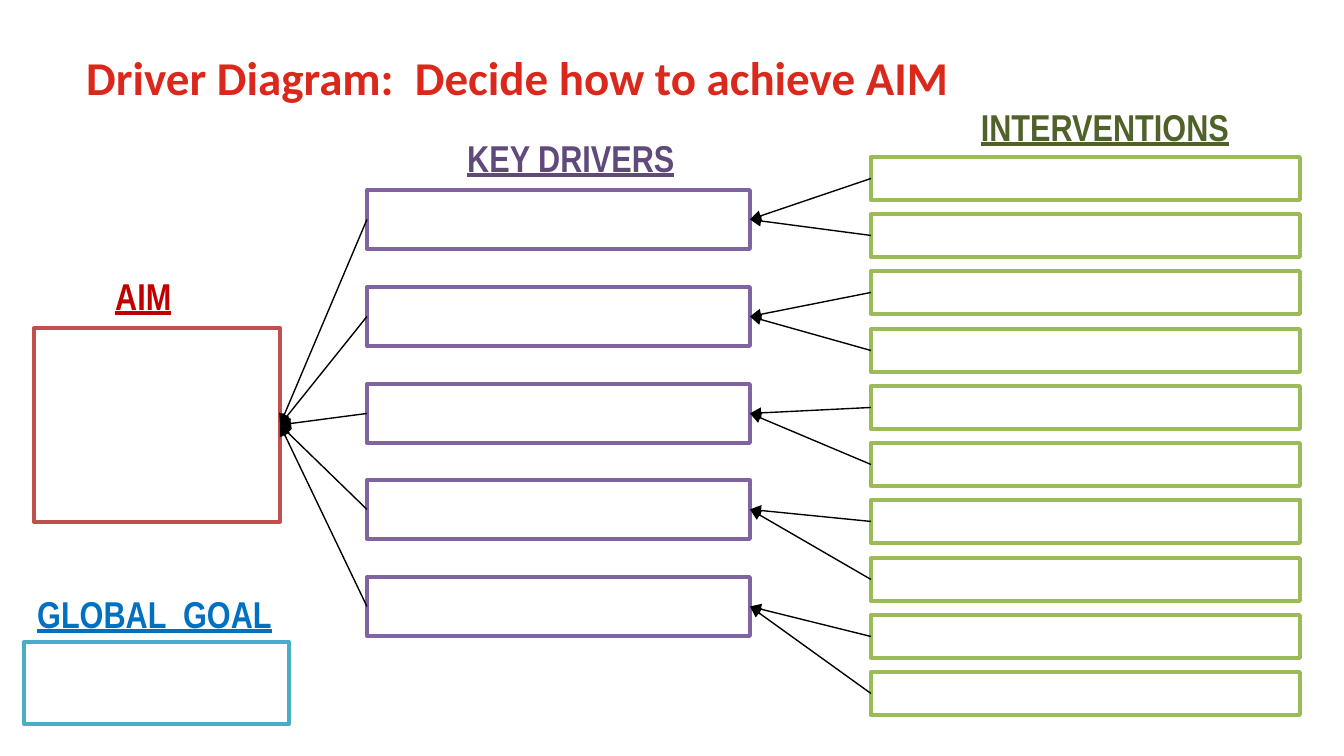
from lxml.etree import SubElement
from pptx import Presentation
from pptx.dml.color import RGBColor as RGB
from pptx.enum.shapes import MSO_CONNECTOR as LINK, MSO_SHAPE as SHAPE
from pptx.enum.text import MSO_ANCHOR as ANCHOR, MSO_AUTO_SIZE as FIT, PP_ALIGN as ALIGN
from pptx.oxml.ns import qn
from pptx.util import Pt

PX = 914400 / 134.4
RED = RGB(0xDA, 0x29, 0x1C)
CRIMSON = RGB(0xC0, 0x00, 0x00)
BRICK = RGB(0xC0, 0x50, 0x4D)
PLUM = RGB(0x60, 0x4A, 0x7B)
PURPLE = RGB(0x80, 0x64, 0xA2)
OLIVE = RGB(0x4F, 0x62, 0x28)
GREEN = RGB(0x9B, 0xBB, 0x59)
BLUE = RGB(0x00, 0x70, 0xC0)
TEAL = RGB(0x4B, 0xAC, 0xC6)
WHITE = RGB(0xFF, 0xFF, 0xFF)
BLACK = RGB(0x00, 0x00, 0x00)


def emu(*sizes):
    return [round(size * PX) for size in sizes]


class Board:
    """Draws the parts of a driver diagram on one slide in a shared style."""

    def __init__(self, slide):
        self.shapes = slide.shapes

    def text(self, words, area, color, font, size):
        frame = self.shapes.add_textbox(*emu(*area)).text_frame
        frame.text = words
        style = frame.paragraphs[0].runs[0].font
        style.name, style.size, style.bold = font, Pt(size), True
        style.color.rgb = color
        return frame

    def title(self, words, area):
        frame = self.text(words, area, RED, "Calibri", 25.2)
        frame.word_wrap = True
        frame.vertical_anchor = ANCHOR.MIDDLE

    def label(self, words, area, color, align=ALIGN.LEFT):
        frame = self.text(words, area, color, "Arial Narrow", 20)
        frame.word_wrap = False
        frame.auto_size = FIT.SHAPE_TO_FIT_TEXT
        frame.paragraphs[0].alignment = align
        frame.paragraphs[0].runs[0].font.underline = True

    def box(self, area, color):
        box = self.shapes.add_shape(SHAPE.RECTANGLE, *emu(*area))
        box.shadow.inherit = False
        box.fill.solid()
        box.fill.fore_color.rgb = WHITE
        box.line.color.rgb = color
        box.line.width = Pt(2)
        return box

    def stack(self, area, last, count, color):
        left, top, width, height = area
        step = (last - top) / (count - 1)
        return [self.box((left, round(top + i * step), width, height), color)
                for i in range(count)]

    def arrow(self, source, target):
        line = self.shapes.add_connector(LINK.STRAIGHT, 0, 0, 0, 0)
        line.begin_connect(source, 1)
        line.end_connect(target, 3)
        line.line.color.rgb = BLACK
        line.line.width = Pt(0.75)
        SubElement(line.line._get_or_add_ln(), qn("a:tailEnd"), type="triangle")
        SubElement(line._element.spPr, qn("a:effectLst"))


def main():
    deck = Presentation()
    deck.slide_width, deck.slide_height = emu(1344, 756)
    board = Board(deck.slides.add_slide(deck.slide_layouts[6]))

    board.title("Driver Diagram:  Decide how to achieve AIM", (73, 40, 1210, 74))
    board.label("AIM", (102, 267, 83, 59), CRIMSON)
    board.label("KEY DRIVERS", (454, 129, 237, 59), PLUM)
    board.label("INTERVENTIONS", (966, 98, 278, 59), OLIVE, ALIGN.CENTER)
    board.label("GLOBAL  GOAL", (24, 585, 263, 59), BLUE)

    aim = board.box((34, 328, 246, 194), BRICK)
    board.box((24, 642, 265, 82), TEAL)
    drivers = board.stack((367, 190, 383, 59), 577, 5, PURPLE)
    actions = board.stack((871, 157, 429, 43), 672, 10, GREEN)

    for driver in drivers:
        board.arrow(driver, aim)
    for i, action in enumerate(actions):
        board.arrow(action, drivers[i // 2])

    deck.save("out.pptx")


if __name__ == "__main__":
    main()
